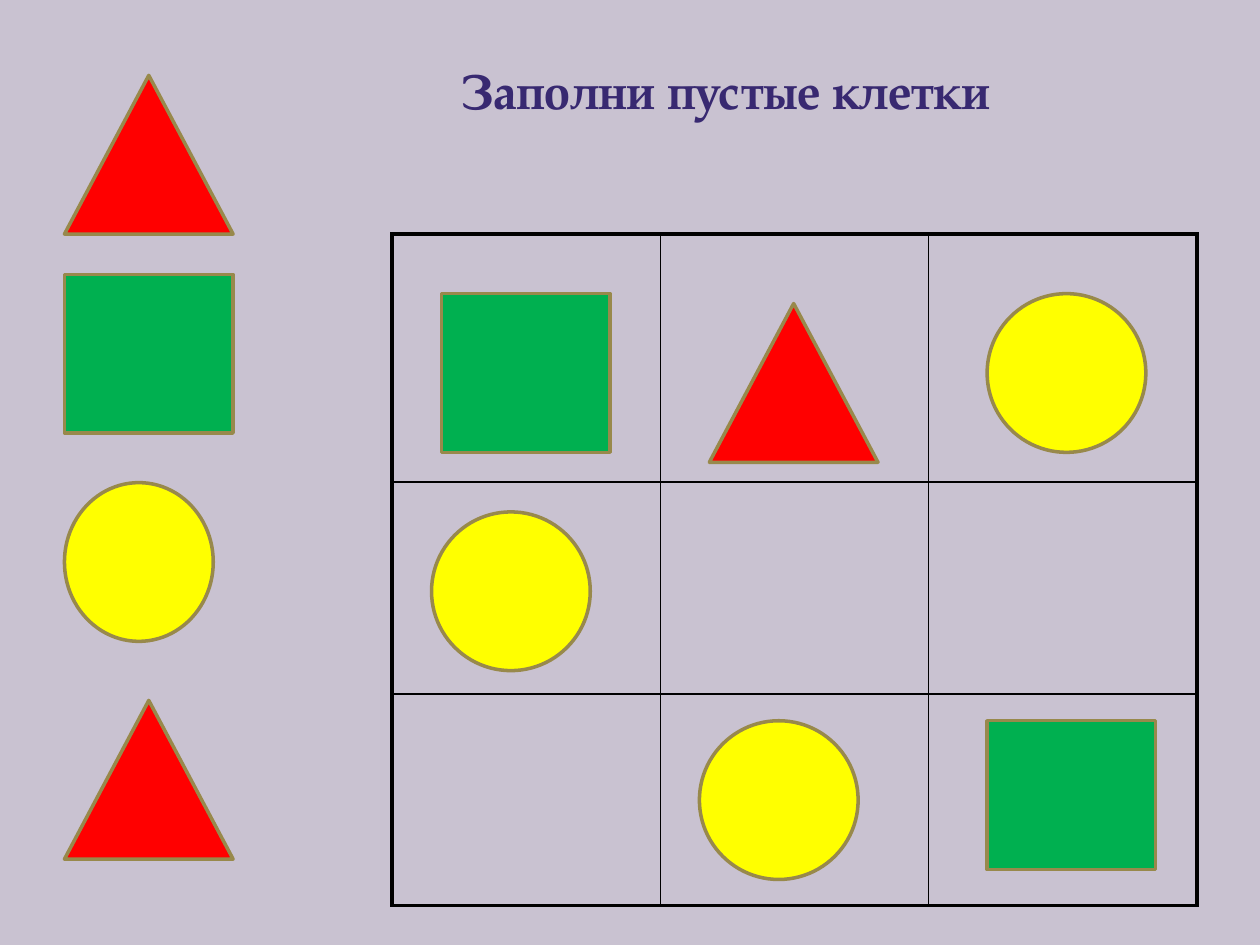
from dataclasses import dataclass

from lxml.etree import SubElement
from pptx import Presentation
from pptx.dml.color import RGBColor
from pptx.enum.shapes import MSO_SHAPE
from pptx.enum.text import MSO_ANCHOR, PP_ALIGN
from pptx.oxml.ns import qn
from pptx.slide import Slide
from pptx.table import _Cell
from pptx.util import Cm, Pt


@dataclass(frozen=True)
class Theme:
    background: str = "C9C2D1"
    title: str = "382971"
    outline: str = "98894B"
    grid: str = "000000"
    font: str = "TeX Gyre Pagella"
    title_size: float = 28
    outline_width: float = 2
    inner_border: float = 1
    outer_border: float = 2.25


@dataclass(frozen=True)
class Figure:
    preset: MSO_SHAPE
    color: str
    width: float
    height: float = 3.2


@dataclass(frozen=True)
class Placement:
    figure: Figure
    left: float
    top: float


THEME = Theme()
SQUARE = Figure(MSO_SHAPE.RECTANGLE, "00B050", 3.4)
LOW_SQUARE = Figure(MSO_SHAPE.RECTANGLE, "00B050", 3.4, 3.0)
CIRCLE = Figure(MSO_SHAPE.OVAL, "FFFF00", 3.2)
NARROW_CIRCLE = Figure(MSO_SHAPE.OVAL, "FFFF00", 3.0)
TRIANGLE = Figure(MSO_SHAPE.ISOSCELES_TRIANGLE, "FF0000", 3.4)

SAMPLE_LEFT = 1.3
SAMPLES = [
    Placement(TRIANGLE, SAMPLE_LEFT, 1.52),
    Placement(SQUARE, SAMPLE_LEFT, 5.53),
    Placement(NARROW_CIRCLE, SAMPLE_LEFT, 9.73),
    Placement(TRIANGLE, SAMPLE_LEFT, 14.12),
]
GRID_FIGURES = [
    Placement(SQUARE, 8.9, 5.92),
    Placement(TRIANGLE, 14.3, 6.12),
    Placement(CIRCLE, 19.9, 5.92),
    Placement(CIRCLE, 8.7, 10.32),
    Placement(CIRCLE, 14.1, 14.53),
    Placement(LOW_SQUARE, 19.9, 14.53),
]
COLUMN_WIDTHS = [5.41] * 3
ROW_HEIGHTS = [5.0, 4.27, 4.27]


def write_title(page: Slide, text: str) -> None:
    box = page.shapes.title
    box.left, box.top, box.width, box.height = Cm(4.9), Cm(0.53), Cm(19.46), Cm(2.57)
    box.text_frame.vertical_anchor = MSO_ANCHOR.MIDDLE
    para = box.text_frame.paragraphs[0]
    para.alignment = PP_ALIGN.CENTER
    span = para.add_run()
    span.text = text
    formats = {"name": THEME.font, "size": Pt(THEME.title_size), "bold": True}
    for name, value in formats.items():
        setattr(span.font, name, value)
    span.font.color.rgb = RGBColor.from_string(THEME.title)


def set_borders(cell: _Cell, widths: dict[str, float]) -> None:
    """Draw cell borders; the keys run in schema order: L, R, T, B."""
    properties = cell._tc.get_or_add_tcPr()
    for side, width in widths.items():
        line = SubElement(properties, qn(f"a:ln{side}"), w=str(Pt(width)))
        fill = SubElement(line, qn("a:solidFill"))
        SubElement(fill, qn("a:srgbClr"), val=THEME.grid)


def add_grid(page: Slide, left: float, top: float) -> None:
    rows, columns = len(ROW_HEIGHTS), len(COLUMN_WIDTHS)
    table = page.shapes.add_table(
        rows, columns, Cm(left), Cm(top), Cm(sum(COLUMN_WIDTHS)), Cm(sum(ROW_HEIGHTS))
    ).table
    table.first_row = table.horz_banding = False
    for column, width in zip(table.columns, COLUMN_WIDTHS):
        column.width = Cm(width)
    for row, height in zip(table.rows, ROW_HEIGHTS):
        row.height = Cm(height)
    for r in range(rows):
        for c in range(columns):
            cell = table.cell(r, c)
            on_edge = {"L": c == 0, "R": c == columns - 1, "T": r == 0, "B": r == rows - 1}
            set_borders(cell, {
                side: THEME.outer_border if edge else THEME.inner_border
                for side, edge in on_edge.items()
            })
            cell.fill.background()


def add_figure(page: Slide, place: Placement) -> None:
    figure = place.figure
    shape = page.shapes.add_shape(
        figure.preset, Cm(place.left), Cm(place.top), Cm(figure.width), Cm(figure.height)
    )
    shape.shadow.inherit = False
    shape.fill.solid()
    shape.fill.fore_color.rgb = RGBColor.from_string(figure.color)
    shape.line.color.rgb = RGBColor.from_string(THEME.outline)
    shape.line.width = Pt(THEME.outline_width)


def main() -> None:
    deck = Presentation()
    deck.slide_width, deck.slide_height = Cm(25.4), Cm(19.05)
    page = deck.slides.add_slide(deck.slide_layouts[5])
    page.background.fill.solid()
    page.background.fill.fore_color.rgb = RGBColor.from_string(THEME.background)
    write_title(page, "Заполни пустые клетки")
    add_grid(page, left=7.9, top=4.72)
    for place in GRID_FIGURES + SAMPLES:
        add_figure(page, place)
    deck.save("out.pptx")


if __name__ == "__main__":
    main()
